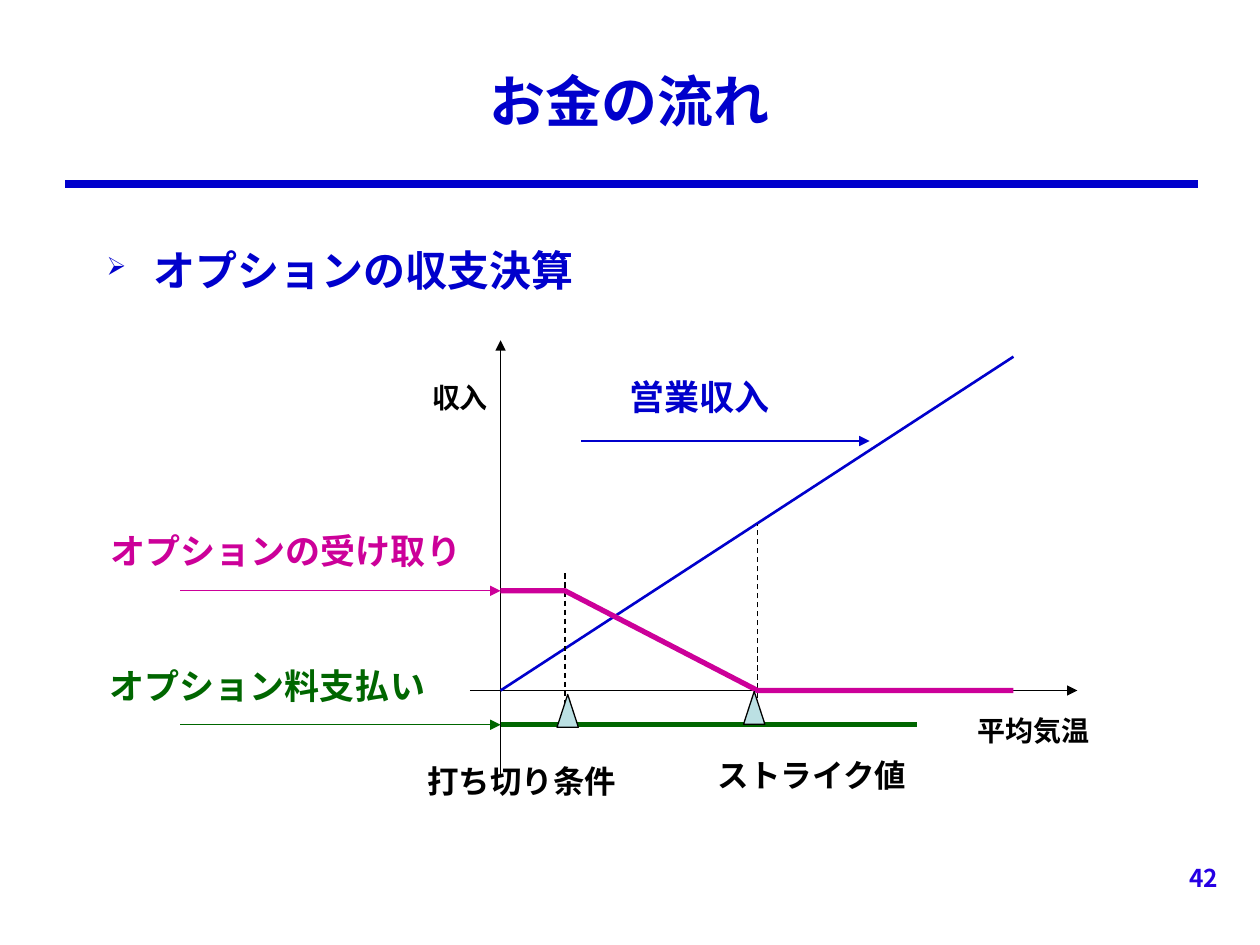
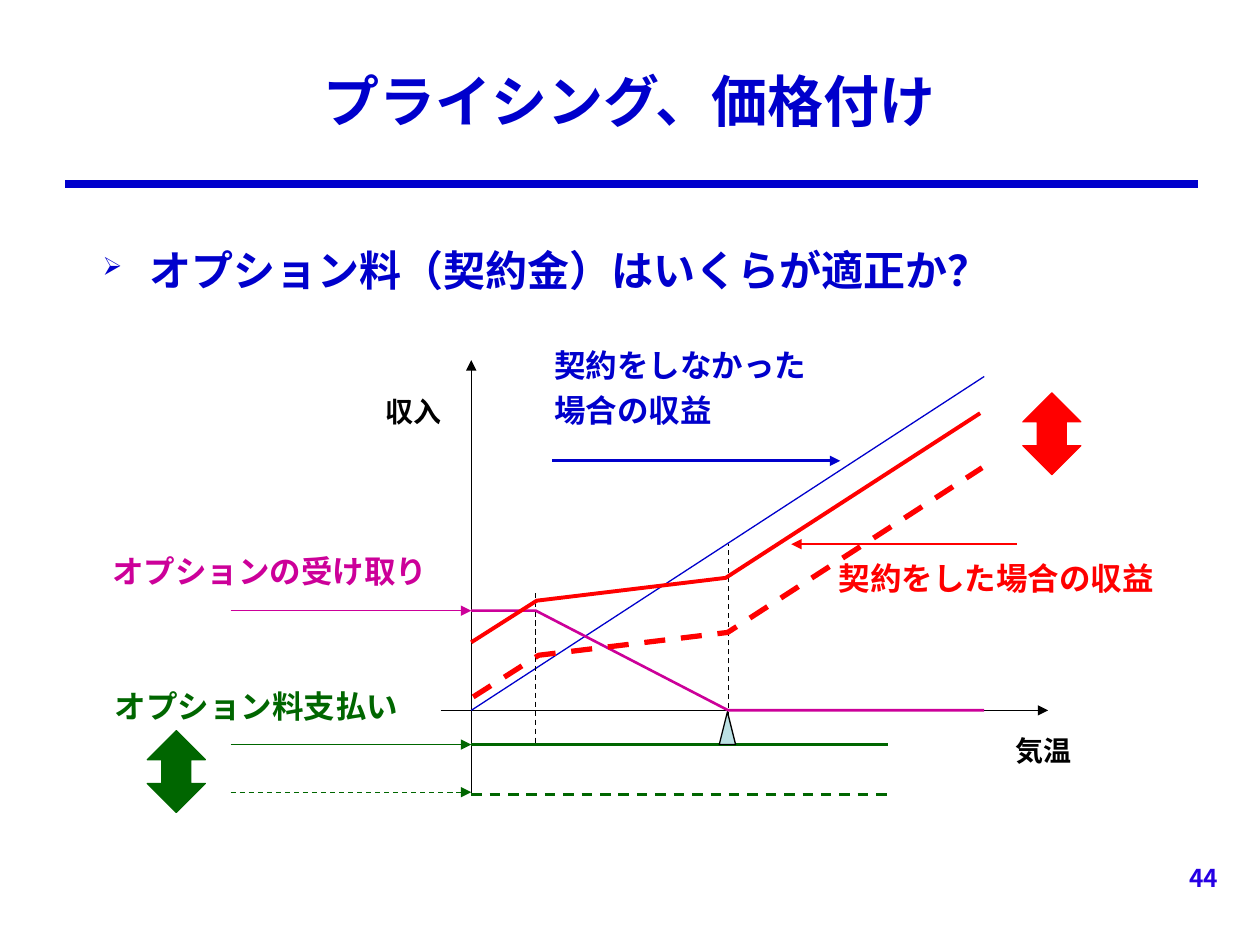
from pptx import Presentation, util as u
from pptx.dml.color import RGBColor
from pptx.enum import dml, shapes, text
from pptx.oxml.ns import qn
from lxml import etree

Cm, Pt = u.Cm, u.Pt
rgb = RGBColor.from_string
BLUE, GREEN, PINK, RED = "0000CC", "006600", "CC0099", "FF0000"
BLACK, WHITE, PALE, PAGE = "000000", "FFFFFF", "BBE0E3", "2600E4"
NOTO, ARIAL = "Noto Sans CJK JP", "Arial"
LEFT, MID, RIGHT = (text.PP_ALIGN.LEFT, text.PP_ALIGN.CENTER,
                    text.PP_ALIGN.RIGHT)


def write(page, box, words, size, hue, face=NOTO, align=LEFT, back=None):
    """Add a bold text box; each line of words is a paragraph."""
    item = page.shapes.add_textbox(*map(Cm, box))
    if back:
        item.fill.solid()
        item.fill.fore_color.rgb = rgb(back)
    frame = item.text_frame
    frame.word_wrap = True
    frame.text = words
    for n, para in enumerate(frame.paragraphs):
        para.alignment = align
        if n:
            para.space_before = Pt(4)
        font = para.font
        font.size, font.bold, font.name = Pt(size), True, face
        font.color.rgb = rgb(hue)
        base = para._p.pPr.find(qn("a:defRPr"))
        etree.SubElement(base, qn("a:ea"), typeface=NOTO)
    return frame


def draw(page, dots, hue, width, dash=False, tip=False):
    """Join dots: a connector for two, an open outline for more."""
    dots = [(Cm(x), Cm(y)) for x, y in dots]
    if len(dots) == 2:
        item = page.shapes.add_connector(
            shapes.MSO_CONNECTOR.STRAIGHT, *dots[0], *dots[1])
    else:
        path = page.shapes.build_freeform(*dots[0], scale=1.0)
        path.add_line_segments(dots[1:], close=False)
        item = path.convert_to_shape()
        item.fill.background()
    item.line.color.rgb = rgb(hue)
    item.line.width = Pt(width)
    if dash:
        item.line.dash_style = dml.MSO_LINE.DASH
    if tip:
        etree.SubElement(item.line._get_or_add_ln(), qn("a:tailEnd"),
                         type="triangle")
    etree.SubElement(item._element.spPr, qn("a:effectLst"))


deck = Presentation()
deck.slide_width, deck.slide_height = Cm(25.4), Cm(19.05)

# Per slide: number, title, point, body left, graph origin,
# start of side arrows, widths of the sales and the option lines
plans = [
    ("42", "お金の流れ", "オプションの収支決算", 1.9,
     (10.09, 13.92), 3.63, 1.5, 3),
    ("44", "プライシング、価格付け", "オプション料（契約金）はいくらが適正か？",
     1.82, (9.5, 14.32), 4.65, 0.75, 1.5),
]
# Labels: box, words, size, colour, font, alignment, back
labels = [
    [((8.46, 7.54, 1.9, 0.94), "収入", 16, BLACK),
     ((19.46, 14.25, 3.63, 0.94), "平均気温", 16, BLACK),
     ((1.96, 13.28, 7.29, 1.12), "オプション料支払い", 20, GREEN, ARIAL),
     ((11.99, 7.44, 4.24, 1.12), "営業収入", 20, BLUE, ARIAL, MID),
     ((1.98, 10.54, 7.98, 1.12), "オプションの受け取り", 20, PINK, ARIAL),
     ((14.22, 15.11, 5.18, 1.02), "ストライク値", 18, BLACK, ARIAL),
     ((8.36, 15.24, 5.18, 1.02), "打ち切り条件", 18, BLACK, ARIAL)],
    [((10.92, 6.86, 6.2, 2.16), "契約をしなかった\n場合の収益", 18, BLUE,
      ARIAL, LEFT, WHITE),
     ((7.52, 7.82, 1.9, 0.94), "収入", 16, BLACK, ARIAL),
     ((20.22, 14.66, 1.9, 0.94), "気温", 16, BLACK, ARIAL),
     ((2.06, 13.72, 6.78, 1.02), "オプション料支払い", 18, GREEN,
      ARIAL, LEFT, WHITE),
     ((2.01, 11, 7.04, 1.02), "オプションの受け取り", 18, PINK,
      ARIAL, LEFT, WHITE),
     ((16.66, 11.15, 7.47, 1.02), "契約をした場合の収益", 18, RED,
      ARIAL, LEFT, WHITE)],
]
# Preset shapes: kind, box, fill, line
WEDGE = shapes.MSO_SHAPE.ISOSCELES_TRIANGLE
SWING = shapes.MSO_SHAPE.UP_DOWN_ARROW
marks = [
    [(WEDGE, (14.99, 13.94, 0.43, 0.66), PALE, BLACK),
     (WEDGE, (11.23, 14, 0.43, 0.66), PALE, BLACK)],
    [(WEDGE, (14.5, 14.35, 0.33, 0.66), PALE, BLACK),
     (SWING, (2.97, 14.73, 1.17, 1.65), GREEN, GREEN),
     (SWING, (20.62, 7.92, 1.17, 1.65), RED, RED)],
]
# Graph lengths, measured from the origin
STOP, STRIKE, END, FEE, GAIN = 1.3, 5.18, 10.34, 0.69, -2.01
FEEEND = 8.4

for plan, notes, signs in zip(plans, labels, marks):
    num, title, point, left, (ox, oy), start, thin, bold = plan
    page = deck.slides.add_slide(deck.slide_layouts[6])
    side = start - ox

    # Title, rule, number and bullet
    draw(page, [(1.32, 3.71), (24.16, 3.71)], BLUE, 4.5)
    write(page, (22.96, 17.27, 1.85, 1.27), num, 14, PAGE, align=RIGHT)
    head = write(page, (1.9, 0.64, 21.6, 2.74), title, 32, BLUE, align=MID)
    head.vertical_anchor = text.MSO_ANCHOR.MIDDLE
    para = write(page, (left, 4.65, 21.6, 12.27), point, 24,
                 BLUE).paragraphs[0]
    para.line_spacing = 1.15
    props = para._p.pPr
    props.set("marL", str(Cm(0.95)))
    props.set("indent", str(Cm(-0.95)))
    base = props.find(qn("a:defRPr"))
    for tag, key, val in (("a:buSzPct", "val", "60000"),
                          ("a:buChar", "char", "➢")):
        bullet = etree.SubElement(props, qn(tag))
        bullet.set(key, val)
        base.addprevious(bullet)

    # Graph: dots, colour, width, dash, tip
    lines = [
        ([(-0.62, 0), (11.63, 0)], BLACK, 0.75, False, True),
        ([(0, 1.68), (0, -7.06)], BLACK, 0.75, False, True),
        ([(0, 0), (END, -6.73)], BLUE, thin, False, False),
        ([(0, FEE), (FEEEND, FEE)], GREEN, bold, False, False),
        ([(STOP, -2.36), (STOP, FEE)], BLACK, 0.75, True, False),
        ([(STRIKE, FEE), (STRIKE, -3.35)], BLACK, 0.75, True, False),
        ([(0, GAIN), (STOP, GAIN), (STRIKE, 0), (END, 0)],
         PINK, bold, False, False),
        ([(side, FEE), (0, FEE)], GREEN, 0.75, False, True),
        ([(side, GAIN), (0, GAIN)], PINK, 0.75, False, True),
    ]
    late = [([(1.63, -5.03), (7.44, -5.03)], BLUE, 1.5, False, True)]

    # Results with a contract, before and after a higher fee
    if num == "44":
        deal = [(0, -1.37), (1.32, -2.21), (5.13, -2.67), (10.26, -5.99)]
        lines.append((deal, RED, 2.25, False, False))
        late += [
            ([(11, -3.35), (6.45, -3.35)], RED, 1.5, False, True),
            ([(0, 1.7), (FEEEND, 1.7)], GREEN, 1.5, True, False),
            ([(side, 1.65), (0, 1.65)], GREEN, 0.75, True, True),
            ([(x + 0.04, y + 1.1) for x, y in deal], RED, 3, True, False),
        ]

    # Labels cover the first lines and lie under the late ones
    for dots, *style in lines:
        draw(page, [(ox + x, oy + y) for x, y in dots], *style)
    for note in notes:
        frame = write(page, *note)
        frame.auto_size = text.MSO_AUTO_SIZE.SHAPE_TO_FIT_TEXT
    for dots, *style in late:
        draw(page, [(ox + x, oy + y) for x, y in dots], *style)

    # Triangles on the axis and double arrows
    for kind, box, fill, edge in signs:
        sign = page.shapes.add_shape(kind, *map(Cm, box))
        sign.shadow.inherit = False
        sign.fill.solid()
        sign.fill.fore_color.rgb = rgb(fill)
        sign.line.color.rgb = rgb(edge)
        sign.line.width = Pt(0.75)
        if kind == SWING:
            sign.adjustments[0] = 0.38

deck.save("out.pptx")
